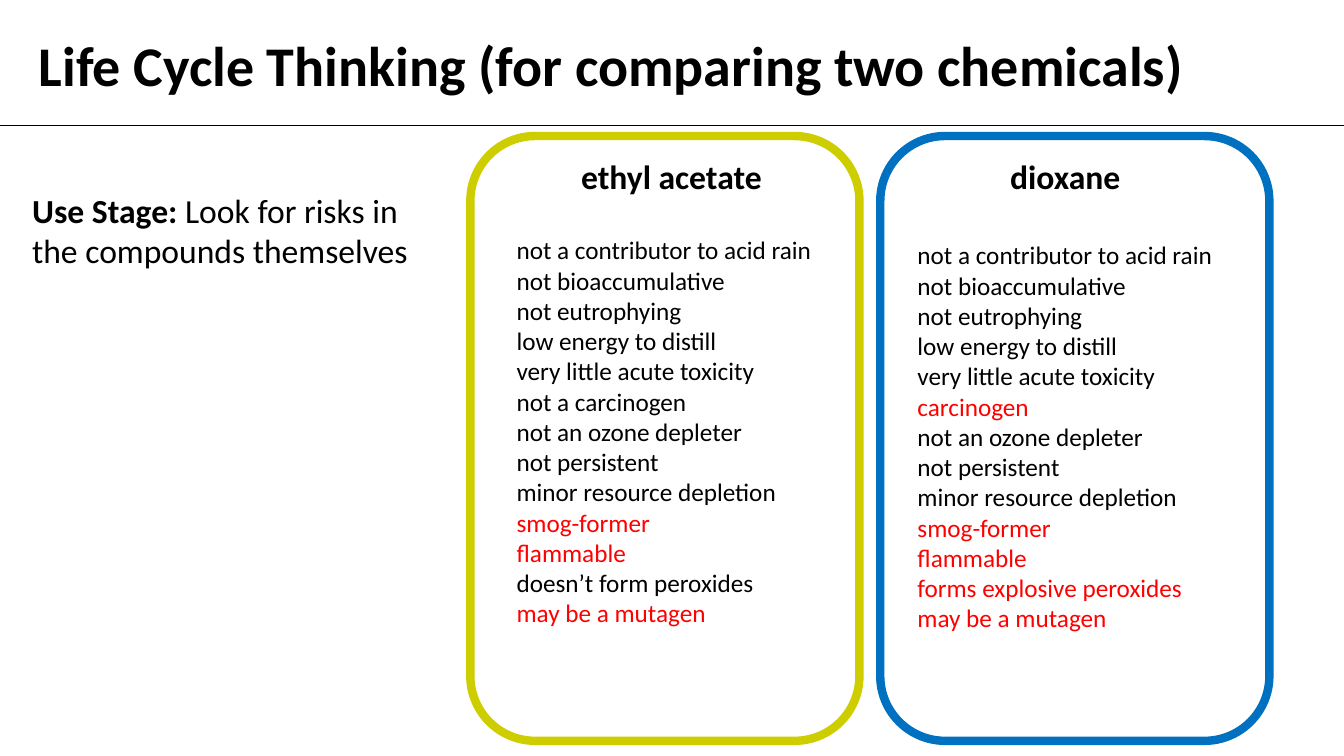
from lxml import etree
from pptx import Presentation, util as u
from pptx.dml.color import RGBColor
from pptx.enum import shapes, text
from pptx.oxml.ns import qn

WIDTH, HEIGHT = u.Inches(13.33), u.Inches(7.5)
COLUMN, ROW = WIDTH / 40, HEIGHT / 30
COLORS = {"ink": "000000", "hazard": "FF0000", "ester": "CDCD00", "ether": "0070C0"}
HAZARDS = {"carcinogen", "smog-former", "flammable", "forms explosive peroxides", "may be a mutagen"}


def color(name):
    """Return the named colour."""
    return RGBColor.from_string(COLORS[name])


def grid(left, top, width, height):
    """Turn columns and rows into slide lengths."""
    return [u.Emu(round(size)) for size in (left * COLUMN, top * ROW, width * COLUMN, height * ROW)]


def style(span, size, bold=False, name="ink"):
    """Set the font of a run."""
    span.font.name, span.font.size, span.font.bold = "Calibri", u.Pt(size), bold
    span.font.color.rgb = color(name)


def add_text(page, area, lines, wrap=True):
    """Place a text box whose lines are lists of (words, size, bold, colour)."""
    frame = page.shapes.add_textbox(*grid(*area)).text_frame
    frame.word_wrap = wrap
    frame.auto_size = text.MSO_AUTO_SIZE.SHAPE_TO_FIT_TEXT
    for index, line in enumerate(lines):
        para = frame.add_paragraph() if index else frame.paragraphs[0]
        for words, *look in line:
            span = para.add_run()
            span.text = words
            style(span, *look)
    return frame


def add_header(page, left, top, width, height):
    """Draw the title and the rule that closes the header."""
    frame = add_text(page, (left + 0.66, top + 1, 35.05, 3.08),
                     [[("Life Cycle Thinking (for comparing two chemicals)", 40, True)]], wrap=False)
    frame.paragraphs[0].alignment = text.PP_ALIGN.CENTER
    start_x, rule_y, length, _ = grid(left, top + height, width, 0)
    rule = page.shapes.add_connector(shapes.MSO_CONNECTOR.STRAIGHT, start_x, rule_y, start_x + length, rule_y)
    rule.line.color.rgb, rule.line.width = color("ink"), u.Pt(0.5)
    etree.SubElement(rule._element.spPr, qn("a:effectLst"))


def add_stage(page, left, top, width, height):
    """Write the stage being compared."""
    add_text(page, (left, top, width, height),
             [[("Use Stage: ", 24, True), ("Look for risks in the compounds themselves", 24)]])


def add_chemical(page, left, top, width, height, chemical):
    """Draw one chemical's outlined panel with its heading and traits."""
    list_x, list_y = chemical["list_offset"]
    traits = [
        "not a contributor to acid rain", "not bioaccumulative", "not eutrophying",
        "low energy to distill", "very little acute toxicity", chemical["cancer"],
        "not an ozone depleter", "not persistent", "minor resource depletion",
        "smog-former", "flammable", chemical["peroxides"], "may be a mutagen",
    ]
    add_text(page, (left + list_x, top + list_y, 10.47, 16.16),
             [[(trait, 18, False, "hazard" if trait in HAZARDS else "ink")] for trait in traits])
    heading_x, heading_width = chemical["heading_span"]
    add_text(page, (left + heading_x, top + 0.6, heading_width, 2), [[(chemical["name"], 24, True)]])
    panel = page.shapes.add_shape(shapes.MSO_SHAPE.ROUNDED_RECTANGLE, *grid(left, top, width, height))
    panel.shadow.inherit = False
    panel.fill.background()
    panel.line.color.rgb, panel.line.width = color(chemical["color"]), u.Pt(6)


def main():
    """Build and save the slide."""
    deck = Presentation()
    deck.slide_width, deck.slide_height = WIDTH, HEIGHT
    page = deck.slides.add_slide(deck.slide_layouts[6])
    add_stage(page, 0.66, 7.32, 12.33, 3.64)
    add_header(page, 0, 0, 40, 4.96)
    chemicals = [
        {"name": "ethyl acetate", "color": "ester", "cancer": "not a carcinogen",
         "peroxides": "doesn’t form peroxides", "list_offset": (1.08, 3.72), "heading_span": (3, 6.63)},
        {"name": "dioxane", "color": "ether", "cancer": "carcinogen",
         "peroxides": "forms explosive peroxides", "list_offset": (0.81, 3.92), "heading_span": (3.57, 4.2)},
    ]
    for index, chemical in enumerate(chemicals):
        add_chemical(page, 14 + 12.2 * index, 5.4, 11.58, 24, chemical)
    deck.save("out.pptx")


if __name__ == "__main__":
    main()
